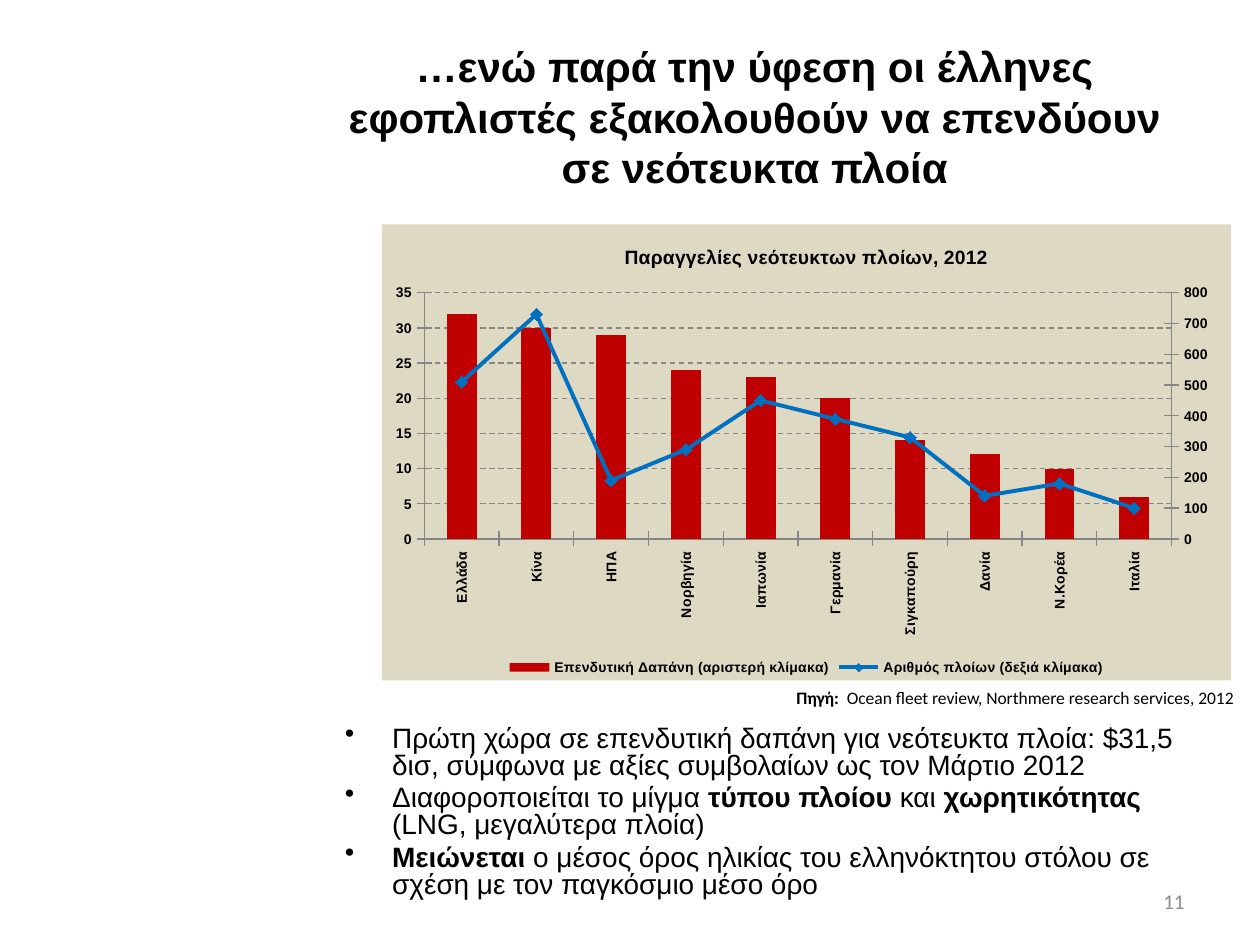
from copy import deepcopy
from lxml import etree
from pptx import Presentation
from pptx import util as u
from pptx.chart import data
from pptx.dml import color
from pptx.enum import chart as ch, dml, text
from pptx.oxml import ns, parse_xml

Pt = u.Pt
HUES = {"ink": "000000", "page": "8C8C8C", "sand": "DDD9C3",
        "red": "C00000", "blue": "0070C0", "grid": "868686"}
LANDS = ["Ελλάδα", "Κίνα", "ΗΠΑ", "Νορβηγία", "Ιαπωνία", "Γερμανία",
         "Σιγκαπούρη", "Δανία", "Ν.Κορέα", "Ιταλία"]
SPEND = [32, 30, 29, 24, 23, 20, 14, 12, 10, 6]
SHIPS = [510, 730, 190, 290, 450, 390, 330, 140, 180, 100]
POINTS = [
    [("Πρώτη χώρα σε επενδυτική δαπάνη για νεότευκτα πλοία: $31,5 δισ, "
      "σύμφωνα με αξίες συμβολαίων ως τον Μάρτιο 2012", False)],
    [("Διαφοροποιείται το μίγμα ", False), ("τύπου πλοίου ", True),
     ("και ", False), ("χωρητικότητας ", True),
     ("(LNG, μεγαλύτερα πλοία)", False)],
    [("Μειώνεται ", True),
     ("ο μέσος όρος ηλικίας του ελληνόκτητου στόλου σε σχέση με τον "
      "παγκόσμιο μέσο όρο", False)],
]


def hue(name):
    return color.RGBColor.from_string(HUES[name])


def style(font, size, face="Arial", tint="ink", bold=False):
    font.size, font.name, font.bold = Pt(size), face, bold
    font.color.rgb = hue(tint)


def add_text(slide, box, paras, size, face="Arial", tint="ink",
             align=text.PP_ALIGN.LEFT, anchor=text.MSO_ANCHOR.TOP):
    frame = slide.shapes.add_textbox(*map(Pt, box)).text_frame
    frame.word_wrap = True
    frame.vertical_anchor = anchor
    for i, parts in enumerate(paras):
        para = frame.add_paragraph() if i else frame.paragraphs[0]
        para.alignment = align
        for words, bold in parts:
            run = para.add_run()
            run.text = words
            style(run.font, size, face, tint, bold)
    return frame


def add_list(slide, box, paras, size):
    frame = add_text(slide, box, paras, size)
    for para in frame.paragraphs:
        para.line_spacing = 0.8
        para.space_before = Pt(0.2 * size)
        props = para._p.get_or_add_pPr()
        props.set("marL", str(Pt(27)))
        props.set("indent", str(-Pt(27)))
        etree.SubElement(props, ns.qn("a:buChar")).set("char", "•")


def set_val(node, tag, val):
    node.find(ns.qn(tag)).set("val", val)


def drop(node, tag):
    for part in node.findall(ns.qn(tag)):
        node.remove(part)


def style_axis(axis, top=None, step=None):
    style(axis.tick_labels.font, 8, bold=True)
    axis.format.line.color.rgb = hue("grid")
    axis.major_tick_mark = ch.XL_TICK_MARK.CROSS
    axis.minor_tick_mark = ch.XL_TICK_MARK.NONE
    if top:
        axis.minimum_scale, axis.maximum_scale = 0, top
        axis.major_unit = step


def split_line(chart):
    plot = chart.element.find(".//" + ns.qn("c:plotArea"))
    bars = plot.find(ns.qn("c:barChart"))
    ser = bars.findall(ns.qn("c:ser"))[1]
    drop(ser, "c:invertIfNegative")
    line = parse_xml(
        f'<c:lineChart {ns.nsdecls("c")}><c:grouping val="standard"/>'
        '<c:varyColors val="0"/><c:marker val="1"/>'
        '<c:axId val="501"/><c:axId val="502"/></c:lineChart>')
    line.insert(2, ser)
    bars.addnext(line)

    cat, val = (plot.find(ns.qn(tag)) for tag in ("c:catAx", "c:valAx"))
    cat2, val2 = deepcopy(cat), deepcopy(val)
    for axis, own, other in ((cat2, "501", "502"), (val2, "502", "501")):
        set_val(axis, "c:axId", own)
        set_val(axis, "c:crossAx", other)
    set_val(cat2, "c:delete", "1")
    set_val(val2, "c:axPos", "r")
    set_val(val2, "c:crosses", "max")
    set_val(val2, "c:majorUnit", "100")
    set_val(val2.find(ns.qn("c:scaling")), "c:max", "800")
    drop(val2, "c:majorGridlines")
    val.addnext(val2)
    val2.addnext(cat2)


def place_plot(chart, x, y, w, h):
    plot = chart.element.find(".//" + ns.qn("c:plotArea"))
    drop(plot, "c:layout")
    sizes = "".join(f'<c:{key} val="{val}"/>'
                    for key, val in zip("xywh", (x, y, w, h)))
    plot.insert(0, parse_xml(
        f'<c:layout {ns.nsdecls("c")}><c:manualLayout>'
        '<c:layoutTarget val="inner"/><c:xMode val="edge"/>'
        f'<c:yMode val="edge"/>{sizes}</c:manualLayout></c:layout>'))


def fill_back(chart, tint):
    chart.element.find(ns.qn("c:chart")).addnext(parse_xml(
        f'<c:spPr {ns.nsdecls("c", "a")}><a:solidFill>'
        f'<a:srgbClr val="{HUES[tint]}"/></a:solidFill>'
        '<a:ln><a:noFill/></a:ln></c:spPr>'))


def add_graph(slide, box):
    facts = data.CategoryChartData()
    facts.categories = LANDS
    facts.add_series("Επενδυτική Δαπάνη (αριστερή κλίμακα)", SPEND)
    facts.add_series("Αριθμός πλοίων (δεξιά κλίμακα)", SHIPS)
    chart = slide.shapes.add_chart(
        ch.XL_CHART_TYPE.COLUMN_CLUSTERED, *map(Pt, box), facts).chart
    style(chart.font, 8, bold=True)
    chart.has_title = True
    title = chart.chart_title.text_frame
    title.text = "Παραγγελίες νεότευκτων πλοίων, 2012"
    style(title.paragraphs[0].runs[0].font, 11, bold=True)
    chart.has_legend = True
    chart.legend.position = ch.XL_LEGEND_POSITION.BOTTOM
    chart.legend.include_in_layout = False
    style(chart.legend.font, 8, bold=True)

    style_axis(chart.category_axis)
    style_axis(chart.value_axis, 35, 5)
    grid = chart.value_axis.major_gridlines.format.line
    grid.color.rgb, grid.width = hue("grid"), Pt(0.75)
    grid.dash_style = dml.MSO_LINE.DASH
    turn = chart.element.find(f".//{ns.qn('c:catAx')}/{ns.qn('c:txPr')}"
                              f"/{ns.qn('a:bodyPr')}")
    turn.set("rot", "-5400000")
    turn.set("vert", "horz")
    split_line(chart)
    place_plot(chart, 0.05, 0.15, 0.88, 0.54)
    fill_back(chart, "sand")

    bars, line = chart.plots
    bars.gap_width = 150
    bars.vary_by_categories = False
    fill = bars.series[0].format.fill
    fill.solid()
    fill.fore_color.rgb = hue("red")
    ships = line.series[0]
    ships.smooth = False
    ships.format.line.color.rgb = hue("blue")
    ships.format.line.width = Pt(2.25)
    ships.marker.style = ch.XL_MARKER_STYLE.DIAMOND
    ships.marker.size = 7
    ships.marker.format.fill.solid()
    ships.marker.format.fill.fore_color.rgb = hue("blue")
    ships.marker.format.line.color.rgb = hue("blue")


def main():
    deck = Presentation()
    deck.slide_width, deck.slide_height = Pt(720), Pt(540)
    slide = deck.slides.add_slide(deck.slide_layouts[6])
    mid = text.MSO_ANCHOR.MIDDLE
    add_text(slide, (178.5, 21.6, 505.5, 90),
             [[("…ενώ παρά την ύφεση οι έλληνες εφοπλιστές εξακολουθούν "
                "να επενδύουν σε νεότευκτα πλοία", True)]],
             24, align=text.PP_ALIGN.CENTER, anchor=mid)
    add_text(slide, (516, 500.5, 168, 28.75), [[("11", False)]], 12,
             "Calibri", "page", text.PP_ALIGN.RIGHT, mid)
    add_list(slide, (190, 412, 510.5, 128), POINTS, 16)
    add_text(slide, (448, 389, 272, 19.4),
             [[("Πηγή: ", True),
               (" Ocean fleet review, Northmere research services, 2012",
                False)]], 10, "Calibri")
    add_graph(slide, (218.2, 128.2, 485.3, 260.6))
    deck.save("out.pptx")


if __name__ == "__main__":
    main()
